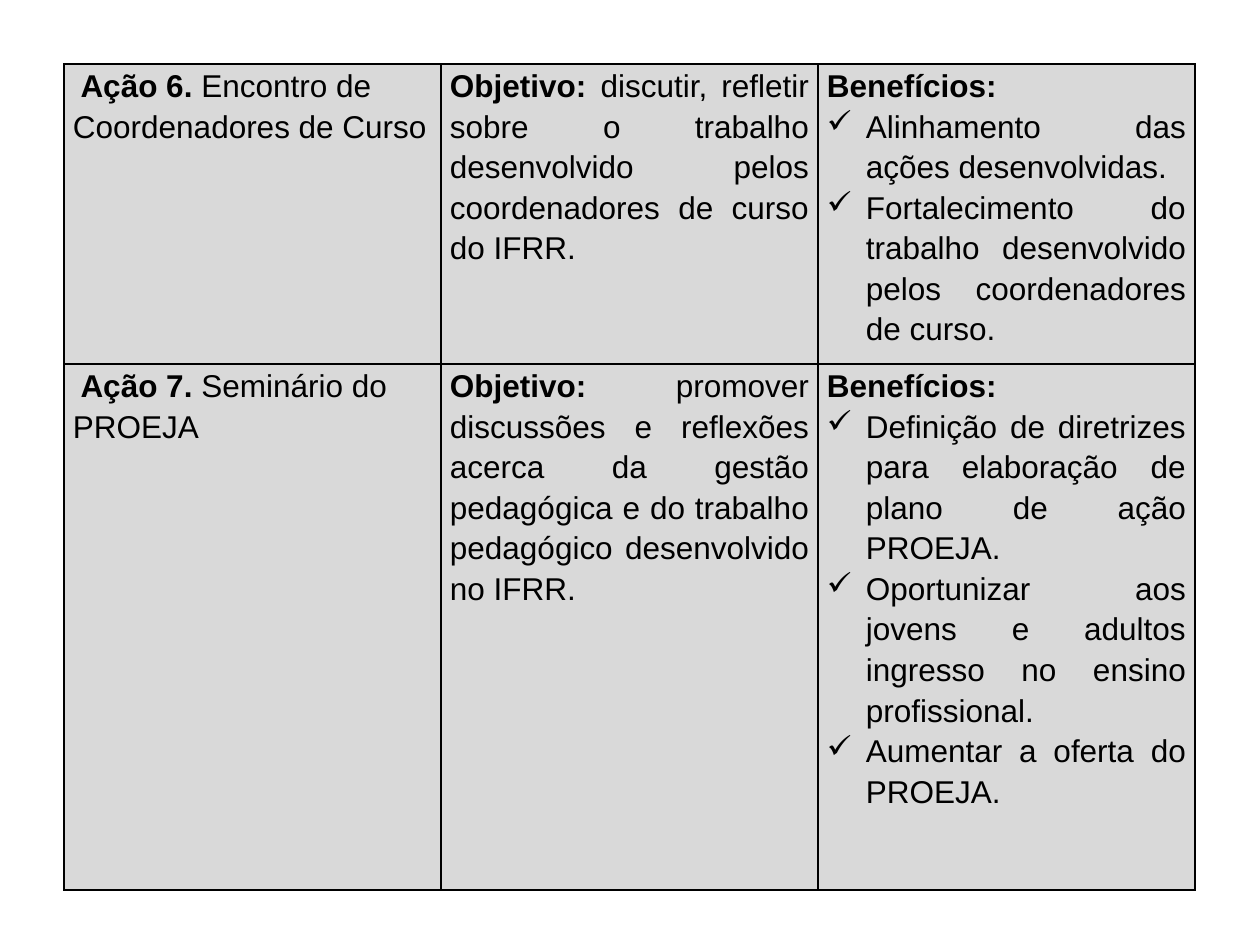
"""Build a slide with a table of actions, objectives and benefits."""
import pptx
import pptx.dml.color
import pptx.enum.text
import pptx.oxml
import pptx.oxml.ns
import pptx.util

BLACK = pptx.dml.color.RGBColor(0x00, 0x00, 0x00)
GREY = pptx.dml.color.RGBColor(0xD9, 0xD9, 0xD9)
LEFT = pptx.enum.text.PP_ALIGN.LEFT
JUSTIFY = pptx.enum.text.PP_ALIGN.JUSTIFY
NS = pptx.oxml.ns.nsdecls("a")
COL_W = 377
ROW_H = [300, 526]
INDENT = 39

ROWS = [
    (
        (" Ação 6. ", "Encontro de Coordenadores de Curso"),
        "discutir, refletir sobre o trabalho desenvolvido pelos coordenadores de curso do IFRR.",
        [
            "Alinhamento das ações desenvolvidas.",
            "Fortalecimento do trabalho desenvolvido pelos coordenadores de curso.",
        ],
    ),
    (
        (" Ação 7. ", "Seminário do PROEJA"),
        "promover discussões e reflexões acerca da gestão pedagógica e do trabalho "
        "pedagógico desenvolvido no IFRR.",
        [
            "Definição de diretrizes para elaboração de plano de ação PROEJA.",
            "Oportunizar aos jovens e adultos ingresso no ensino profissional.",
            "Aumentar a oferta do PROEJA.",
        ],
    ),
]


def px(n):
    return pptx.util.Emu(round(n * 914400 / 126))


def write(p, bold, plain, align):
    p.alignment = align
    p.line_spacing = 1.15
    p.font.name = "Arial"
    p.font.size = pptx.util.Pt(18)
    p.font.color.rgb = BLACK
    for text, is_bold in ((bold, True), (plain, False)):
        if text:
            r = p.add_run()
            r.text = text
            r.font.bold = is_bold


prs = pptx.Presentation()
prs.slide_width, prs.slide_height = px(1260), px(945)
s = prs.slides.add_slide(prs.slide_layouts[6])
table = s.shapes.add_table(2, 3, px(64), px(64), px(3 * COL_W), px(sum(ROW_H))).table
table.first_row = False
table.horz_banding = False
for col in table.columns:
    col.width = px(COL_W)
for row, height in zip(table.rows, ROW_H):
    row.height = px(height)

for cell in table.iter_cells():
    cell.margin_left = cell.margin_right = px(9)
    cell.margin_top = cell.margin_bottom = 0
    tcPr = cell._tc.get_or_add_tcPr()
    for side in ("lnL", "lnR", "lnT", "lnB"):
        tcPr.append(pptx.oxml.parse_xml(
            f'<a:{side} {NS} w="12700"><a:solidFill><a:srgbClr val="{BLACK}"/>'
            f'</a:solidFill></a:{side}>'))
    cell.fill.solid()
    cell.fill.fore_color.rgb = GREY

for i, (action, objective, benefits) in enumerate(ROWS):
    write(table.cell(i, 0).text_frame.paragraphs[0], *action, LEFT)
    write(table.cell(i, 1).text_frame.paragraphs[0], "Objetivo: ", objective, JUSTIFY)
    tf = table.cell(i, 2).text_frame
    write(tf.paragraphs[0], "Benefícios:", "", LEFT)
    for benefit in benefits:
        p = tf.add_paragraph()
        write(p, "", benefit, JUSTIFY)
        pPr = p._p.get_or_add_pPr()
        pPr.set("marL", str(px(INDENT)))
        pPr.set("indent", str(px(-INDENT)))
        bullet = pptx.oxml.parse_xml(f'<a:buChar {NS} char="✓"/>')
        pPr.insert_element_before(bullet, "a:tabLst", "a:defRPr", "a:extLst")

prs.save("out.pptx")
